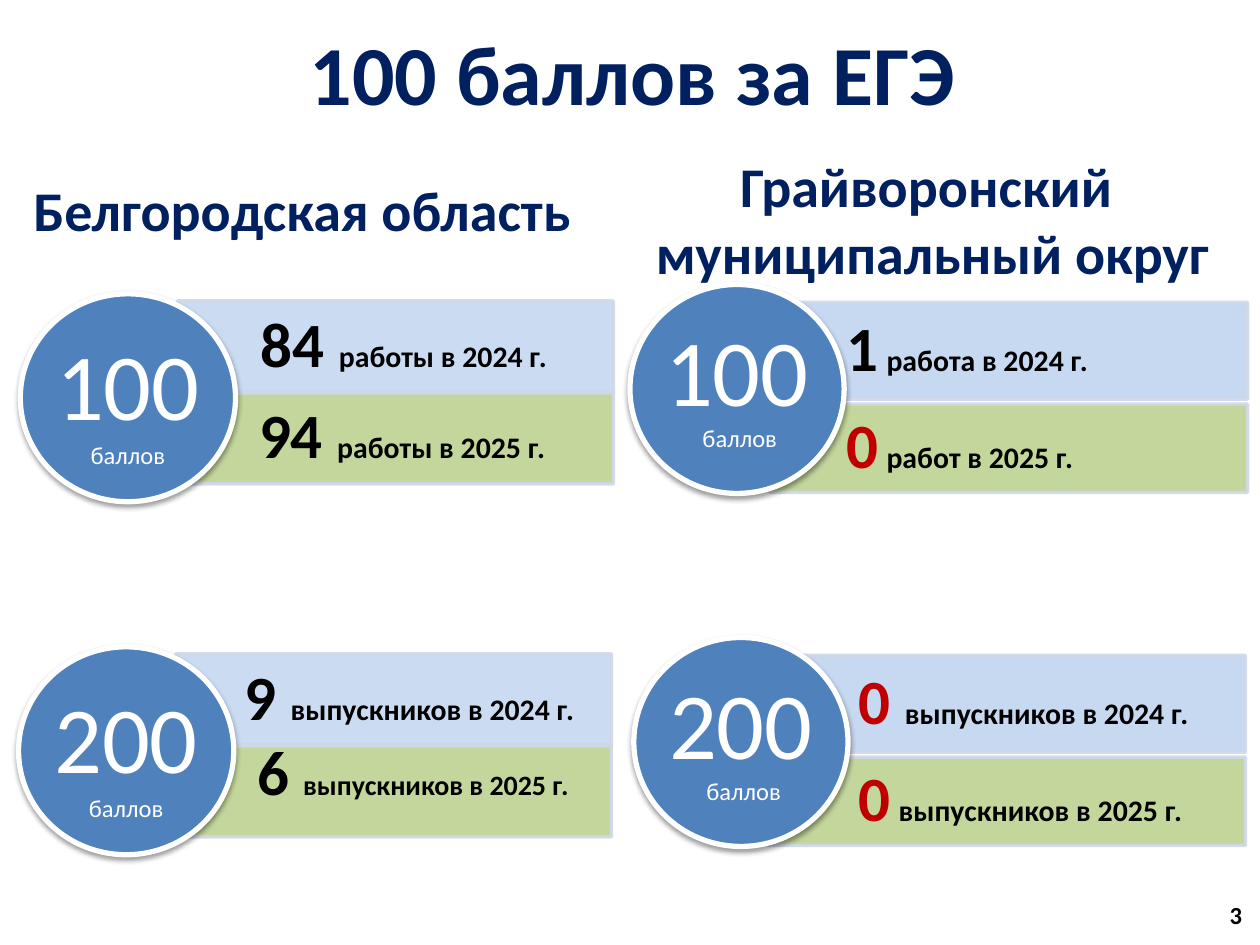
from dataclasses import dataclass

from lxml import etree
from pptx import Presentation
from pptx.dml.color import RGBColor
from pptx.enum.shapes import MSO_SHAPE
from pptx.enum.text import MSO_ANCHOR, PP_ALIGN
from pptx.oxml.ns import qn
from pptx.util import Pt

RECTANGLE, OVAL = MSO_SHAPE.RECTANGLE, MSO_SHAPE.OVAL
MIDDLE = MSO_ANCHOR.MIDDLE
LEFT, CENTER = PP_ALIGN.LEFT, PP_ALIGN.CENTER


@dataclass(frozen=True)
class Theme:
    font: str = "Calibri"
    navy: str = "002060"
    black: str = "000000"
    white: str = "FFFFFF"
    red: str = "C00000"
    circle: str = "4F81BD"
    earlier_year: str = "C6D9F1"
    later_year: str = "C3D69B"
    bar_line: str = "D0D8E8"
    title_size: float = 48
    region_size: float = 32
    score_size: float = 54
    count_size: float = 36
    gap_size: float = 20
    label_size: float = 17
    small_label_size: float = 16
    caption_size: float = 14


@dataclass(frozen=True)
class Box:
    left: float
    top: float
    width: float
    height: float

    def moved(self, across: float, down: float) -> "Box":
        return Box(self.left + across, self.top + down, self.width, self.height)


@dataclass(frozen=True)
class Run:
    text: str
    size: float
    color: str


@dataclass(frozen=True)
class Column:
    circle: Box
    earlier: Box
    later: Box
    inset: float
    earlier_opacity: int
    caption: str
    circle_spacing: float


@dataclass(frozen=True)
class Card:
    column: Column
    score: str
    earlier: tuple
    later: tuple
    bar_shift: float = 0
    circle_shift: float = 0
    down: float = 0
    later_lift: float = 0


THEME = Theme()
ROW_STEP = 201.7
BAR_RIGHT_INSET = 20

REGION = Column(Box(11.6, 167.9, 123, 118.8), Box(101.6, 172, 249, 52.6),
                Box(108.8, 224, 241.8, 52.6), 39.3, 90, "баллов", 1)
DISTRICT = Column(Box(360, 162.6, 122.4, 119.4), Box(440, 172.8, 272.9, 55.4),
                  Box(440, 231, 272.9, 50.4), 43.8, 100, " баллов", 0.9)


def count(text: str, color: str = THEME.black) -> Run:
    return Run(text, THEME.count_size, color)


def label(text: str, size: float = THEME.label_size) -> Run:
    return Run(text, size, THEME.black)


GAP = Run(" ", THEME.gap_size, THEME.black)

CARDS = (
    Card(REGION, "100",
         (count(" 84 "), label("работы в 2024 г.")),
         (count("94 "), label("работы в 2025 г."))),
    Card(DISTRICT, "100",
         (count("1"), GAP, label("работа в 2024 г.")),
         (count("0", THEME.red), GAP, label("работ в 2025 г."))),
    Card(REGION, "200",
         (count("9 "), label("выпускников в 2024 г.")),
         (count("6 "), label("выпускников в 2025 г.", THEME.small_label_size)),
         bar_shift=-1.2, circle_shift=-1, down=ROW_STEP, later_lift=18),
    Card(DISTRICT, "200",
         (count(" 0 ", THEME.red), label("выпускников в 2024 г.")),
         (count(" 0", THEME.red), GAP, label("выпускников в 2025 г.")),
         bar_shift=-1.2, circle_shift=2.2, down=ROW_STEP),
)


def rgb(color: str) -> RGBColor:
    return RGBColor.from_string(color)


def place(box: Box) -> tuple:
    return Pt(box.left), Pt(box.top), Pt(box.width), Pt(box.height)


def set_opacity(fill, percent: int) -> None:
    color = fill._xPr.find(qn("a:solidFill"))[0]
    etree.SubElement(color, qn("a:alpha"), val=str(percent * 1000))


def add_shadow(shape) -> None:
    effects = shape._element.spPr.find(qn("a:effectLst"))
    shadow = etree.SubElement(effects, qn("a:outerShdw"), blurRad=str(Pt(3.1)),
                              dist=str(Pt(1.6)), dir="5400000", rotWithShape="0")
    color = etree.SubElement(shadow, qn("a:srgbClr"), val=THEME.black)
    etree.SubElement(color, qn("a:alpha"), val="38000")


def set_margins(frame, left: float, right: float, bottom: float) -> None:
    frame.margin_left, frame.margin_right = Pt(left), Pt(right)
    frame.margin_top, frame.margin_bottom = 0, Pt(bottom)
    frame.vertical_anchor = MIDDLE
    frame.word_wrap = True


def add_runs(paragraph, runs: tuple) -> None:
    for item in runs:
        run = paragraph.add_run()
        run.text = item.text
        run.font.size = Pt(item.size)
        run.font.color.rgb = rgb(item.color)


def add_filled_shape(slide, kind, box: Box, fill: str, line: str, line_width: float):
    shape = slide.shapes.add_shape(kind, *place(box))
    shape.shadow.inherit = False
    shape.fill.solid()
    shape.fill.fore_color.rgb = rgb(fill)
    shape.line.color.rgb = rgb(line)
    shape.line.width = Pt(line_width)
    return shape


def add_bar(slide, box: Box, fill: str, opacity: int, inset: float,
            runs: tuple, lift: float = 0) -> None:
    bar = add_filled_shape(slide, RECTANGLE, box, fill, THEME.bar_line, 2)
    set_opacity(bar.line.fill, 90)
    if opacity < 100:
        set_opacity(bar.fill, opacity)
    set_margins(bar.text_frame, inset, BAR_RIGHT_INSET, lift)
    paragraph = bar.text_frame.paragraphs[0]
    paragraph.alignment = LEFT
    paragraph.line_spacing = 0.9
    paragraph.font.name = THEME.font
    paragraph.font.bold = True
    add_runs(paragraph, runs)


def add_circle(slide, box: Box, score: str, caption: str, spacing: float) -> None:
    circle = add_filled_shape(slide, OVAL, box, THEME.circle, THEME.white, 3)
    add_shadow(circle)
    set_margins(circle.text_frame, 0, 0, 0)
    paragraph = circle.text_frame.paragraphs[0]
    paragraph.alignment = CENTER
    paragraph.line_spacing = spacing
    paragraph.font.name = THEME.font
    add_runs(paragraph, (Run(score, THEME.score_size, THEME.white),))
    paragraph.add_line_break()
    add_runs(paragraph, (Run(caption, THEME.caption_size, THEME.white),))


def add_card(slide, card: Card) -> None:
    column = card.column
    add_bar(slide, column.later.moved(card.bar_shift, card.down), THEME.later_year,
            100, column.inset, card.later, card.later_lift)
    add_bar(slide, column.earlier.moved(card.bar_shift, card.down), THEME.earlier_year,
            column.earlier_opacity, column.inset, card.earlier)
    add_circle(slide, column.circle.moved(card.circle_shift, card.down),
               card.score, column.caption, column.circle_spacing)


def write_bold(frame, text: str, size: float, color: str, alignment) -> None:
    frame.text = text
    for paragraph in frame.paragraphs:
        paragraph.alignment = alignment
        paragraph.font.name = THEME.font
        paragraph.font.size = Pt(size)
        paragraph.font.bold = True
        paragraph.font.color.rgb = rgb(color)


def add_text(slide, box: Box, text: str, size: float, color: str, alignment,
             wrap: bool = True) -> None:
    frame = slide.shapes.add_textbox(*place(box)).text_frame
    frame.word_wrap = wrap
    write_bold(frame, text, size, color, alignment)


def main() -> None:
    presentation = Presentation()
    presentation.slide_width, presentation.slide_height = Pt(720), Pt(540)
    slide = presentation.slides.add_slide(presentation.slide_layouts[5])
    title = slide.shapes.title
    title.left, title.top, title.width, title.height = place(Box(3, -4, 717, 90))
    title.text_frame.vertical_anchor = MIDDLE
    write_bold(title.text_frame, "100 баллов за ЕГЭ", THEME.title_size, THEME.navy, CENTER)
    for card in CARDS:
        add_card(slide, card)
    add_text(slide, Box(12, 97, 324, 46), "Белгородская область",
             THEME.region_size, THEME.navy, LEFT, wrap=False)
    add_text(slide, Box(292, 83, 482, 85), "Грайворонский \nмуниципальный округ",
             THEME.region_size, THEME.navy, CENTER)
    add_text(slide, Box(695.5, 511, 34.5, 29), "3", THEME.caption_size, THEME.black, LEFT)
    presentation.save("out.pptx")


if __name__ == "__main__":
    main()
